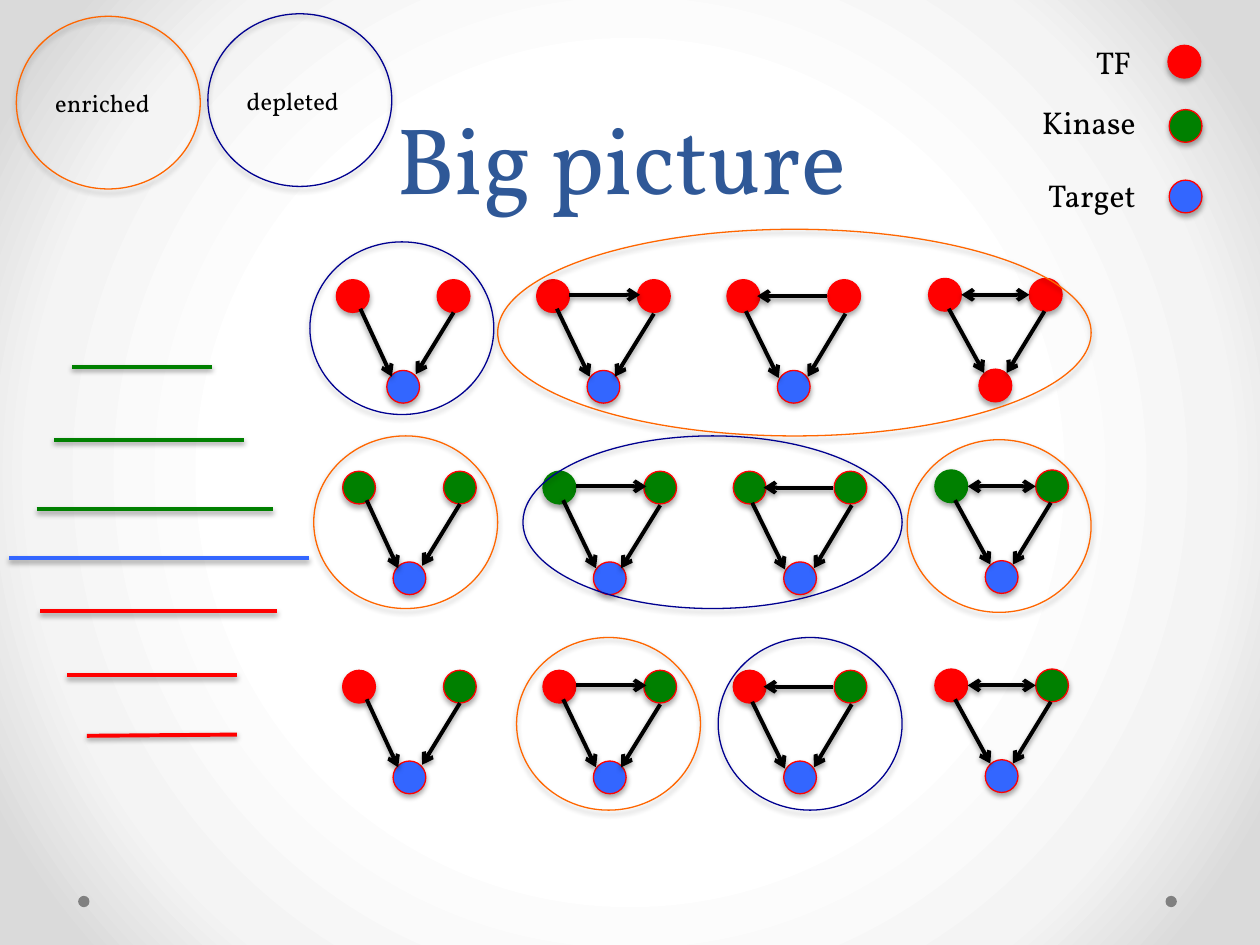
from pptx import Presentation
from pptx.dml.color import RGBColor
from pptx.enum import shapes as kinds, text as txt
from pptx.oxml import parse_xml
from pptx.oxml.ns import nsdecls, qn
from pptx.util import Inches, Pt

RED = RGBColor(0xFF, 0x00, 0x00)
GREEN = RGBColor(0x00, 0x80, 0x00)
BLUE = RGBColor(0x33, 0x66, 0xFF)
ORANGE = RGBColor(0xFF, 0x66, 0x00)
NAVY = RGBColor(0x00, 0x00, 0x90)
BLACK = RGBColor(0x00, 0x00, 0x00)
GREY = RGBColor(0x80, 0x80, 0x80)
TITLE_BLUE = RGBColor(0x2F, 0x58, 0x97)
FONT = "Vollkorn"

BACKGROUND_STOPS = [(50, "FFFFFF"), (76, "F4F4F4"), (92, "DADADA")]
DOT, DOT_TOP, DOT_LEFTS = 0.09, 7.11, (0.62, 9.25)

# Three circles per motif: two regulators above one shared target
NODE = 0.26
NODE_OFFSETS = [(0, 0), (0.8, 0), (0.4, 0.72)]

# Motif columns: offset from the row origin, then arrows inside the motif
COLUMNS = [
    {"dx": 0, "dy": 0, "to_target": [(0.19, 0.23, 0.44, 0.77), (0.93, 0.26, 0.63, 0.75)],
     "between": None, "heads": ()},
    {"dx": 1.59, "dy": 0, "to_target": [(0.16, 0.23, 0.42, 0.77), (0.93, 0.27, 0.62, 0.77)],
     "between": (0.26, 0.12, 0.82, 0.12), "heads": ("tailEnd",)},
    {"dx": 3.1, "dy": 0, "to_target": [(0.15, 0.25, 0.41, 0.78), (0.94, 0.27, 0.64, 0.77)],
     "between": (0.79, 0.13, 0.24, 0.13), "heads": ("tailEnd",)},
    {"dx": 4.7, "dy": -0.01, "to_target": [(0.16, 0.24, 0.44, 0.75), (0.92, 0.26, 0.62, 0.75)],
     "between": (0.26, 0.13, 0.8, 0.13), "heads": ("headEnd", "tailEnd")},
]

# Motif rows: origin and the node colours of each column
ROWS = [
    ((2.67, 2.22), [(RED, RED, BLUE)] * 3 + [(RED, RED, RED)]),
    ((2.72, 3.74), [(GREEN, GREEN, BLUE)] * 4),
    ((2.72, 5.32), [(RED, GREEN, BLUE)] * 4),
]
GREEN_OUTLINED = {(1, 1, 0), (1, 3, 0)}  # row, column, node

NODE_KEY = [  # label, label box, circle position, colour
    ("TF", (8.6, 0.29, 0.5, 0.4), (9.27, 0.36), RED),
    ("Kinase", (8.17, 0.77, 0.96, 0.4), (9.28, 0.87), GREEN),
    ("Target", (8.22, 1.35, 0.91, 0.4), (9.28, 1.43), BLUE),
]
RING_KEY = [
    ("enriched", (0.34, 0.65, 0.96, 0.34)),
    ("depleted", (1.86, 0.63, 0.96, 0.34)),
]

LEVELS = [  # x1, y1, x2, y2, colour
    (0.57, 2.91, 1.68, 2.91, GREEN),
    (0.43, 3.49, 1.94, 3.49, GREEN),
    (0.29, 4.04, 2.17, 4.04, GREEN),
    (0.32, 4.85, 2.2, 4.85, RED),
    (0.53, 5.36, 1.88, 5.36, RED),
    (0.69, 5.84, 1.88, 5.83, RED),
    (0.07, 4.43, 2.45, 4.43, BLUE),
]

RING = (1.46, 1.37)
RINGS = [  # left, top, size, colour
    (3.95, 1.82, (4.71, 1.64), ORANGE),
    (4.1, 5.06, RING, ORANGE),
    (0.13, 0.13, RING, ORANGE),
    (1.65, 0.11, RING, NAVY),
    (5.7, 5.06, RING, NAVY),
    (2.46, 1.92, RING, NAVY),
    (2.49, 3.46, RING, ORANGE),
    (7.2, 3.49, RING, ORANGE),
    (4.15, 3.46, (3.01, 1.37), NAVY),
]


def add_shadow(part, opacity, distance):
    part._element.spPr.append(parse_xml(
        f'<a:effectLst {nsdecls("a")}><a:outerShdw blurRad="{Pt(3.1)}" dist="{Pt(distance)}" '
        f'dir="5400000" rotWithShape="0"><a:srgbClr val="000000">'
        f'<a:alpha val="{opacity * 1000}"/></a:srgbClr></a:outerShdw></a:effectLst>'))


def add_ellipse(slide, left, top, width, height, fill=None, outline=None):
    ellipse = slide.shapes.add_shape(
        kinds.MSO_SHAPE.OVAL, *map(Inches, (left, top, width, height)))
    if fill is None:
        ellipse.fill.background()
    else:
        ellipse.fill.solid()
        ellipse.fill.fore_color.rgb = fill
    if outline is None:
        ellipse.line.fill.background()
        ellipse.shadow.inherit = False
    else:
        ellipse.line.color.rgb = outline
        ellipse.line.width = Pt(0.75)
        add_shadow(ellipse, 35, 1.8)


def add_line(slide, ends, color, heads=()):
    connector = slide.shapes.add_connector(
        kinds.MSO_CONNECTOR.STRAIGHT, *map(Inches, ends))
    connector.line.color.rgb = color
    connector.line.width = Pt(2.25)
    for head in heads:
        end = connector.line._get_or_add_ln().makeelement(qn(f"a:{head}"), {"type": "arrow"})
        connector.line._get_or_add_ln().append(end)
    add_shadow(connector, 38, 1.6)


def write(frame, words, size, color):
    paragraph = frame.paragraphs[0]
    run = paragraph.add_run()
    run.text = words
    for name, value in {"name": FONT, "size": Pt(size)}.items():
        setattr(run.font, name, value)
    run.font.color.rgb = color
    return paragraph


def add_label(slide, words, box, size):
    frame = slide.shapes.add_textbox(*map(Inches, box)).text_frame
    frame.word_wrap = False
    write(frame, words, size, BLACK)


def set_background(slide):
    stops = "".join(f'<a:gs pos="{pos * 1000}"><a:srgbClr val="{color}"/></a:gs>'
                    for pos, color in BACKGROUND_STOPS)
    slide.element.cSld.insert(0, parse_xml(
        f'<p:bg {nsdecls("p", "a")}><p:bgPr><a:gradFill rotWithShape="1"><a:gsLst>{stops}'
        '</a:gsLst><a:path path="circle"><a:fillToRect l="50000" t="50000" r="50000" b="50000"/>'
        '</a:path></a:gradFill><a:effectLst/></p:bgPr></p:bg>'))


def add_title(slide, words):
    title = slide.shapes.title
    box = {"left": 0.43, "top": -0.01, "width": 9, "height": 1.75}
    for name, value in box.items():
        setattr(title, name, Inches(value))
    frame = title.text_frame
    frame.auto_size = txt.MSO_AUTO_SIZE.NONE
    frame.vertical_anchor = txt.MSO_ANCHOR.BOTTOM
    paragraph = write(frame, words, 54, TITLE_BLUE)
    paragraph.alignment = txt.PP_ALIGN.CENTER
    paragraph.line_spacing = Pt(58)


def add_motif(slide, row, col, origin, colors):
    column = COLUMNS[col]
    x, y = origin[0] + column["dx"], origin[1] + column["dy"]
    for node, ((dx, dy), color) in enumerate(zip(NODE_OFFSETS, colors)):
        outline = GREEN if (row, col, node) in GREEN_OUTLINED else RED
        add_ellipse(slide, x + dx, y + dy, NODE, NODE, color, outline)
    arrows = [(ends, ("tailEnd",)) for ends in column["to_target"]]
    if column["between"]:
        arrows.append((column["between"], column["heads"]))
    for (x1, y1, x2, y2), heads in arrows:
        add_line(slide, (x + x1, y + y1, x + x2, y + y2), BLACK, heads)


def main():
    deck = Presentation()
    deck.slide_width, deck.slide_height = Inches(10), Inches(7.5)
    slide = deck.slides.add_slide(deck.slide_layouts[5])
    set_background(slide)
    add_title(slide, "Big picture")
    for left in DOT_LEFTS:
        add_ellipse(slide, left, DOT_TOP, DOT, DOT, GREY)
    for row, (origin, motifs) in enumerate(ROWS):
        for col, colors in enumerate(motifs):
            add_motif(slide, row, col, origin, colors)
    for words, box, (left, top), color in NODE_KEY:
        add_ellipse(slide, left, top, NODE, NODE, color, RED)
        add_label(slide, words, box, 18)
    for *ends, color in LEVELS:
        add_line(slide, ends, color)
    for words, box in RING_KEY:
        add_label(slide, words, box, 14)
    for left, top, size, color in RINGS:
        add_ellipse(slide, left, top, *size, outline=color)
    deck.save("out.pptx")


if __name__ == "__main__":
    main()
